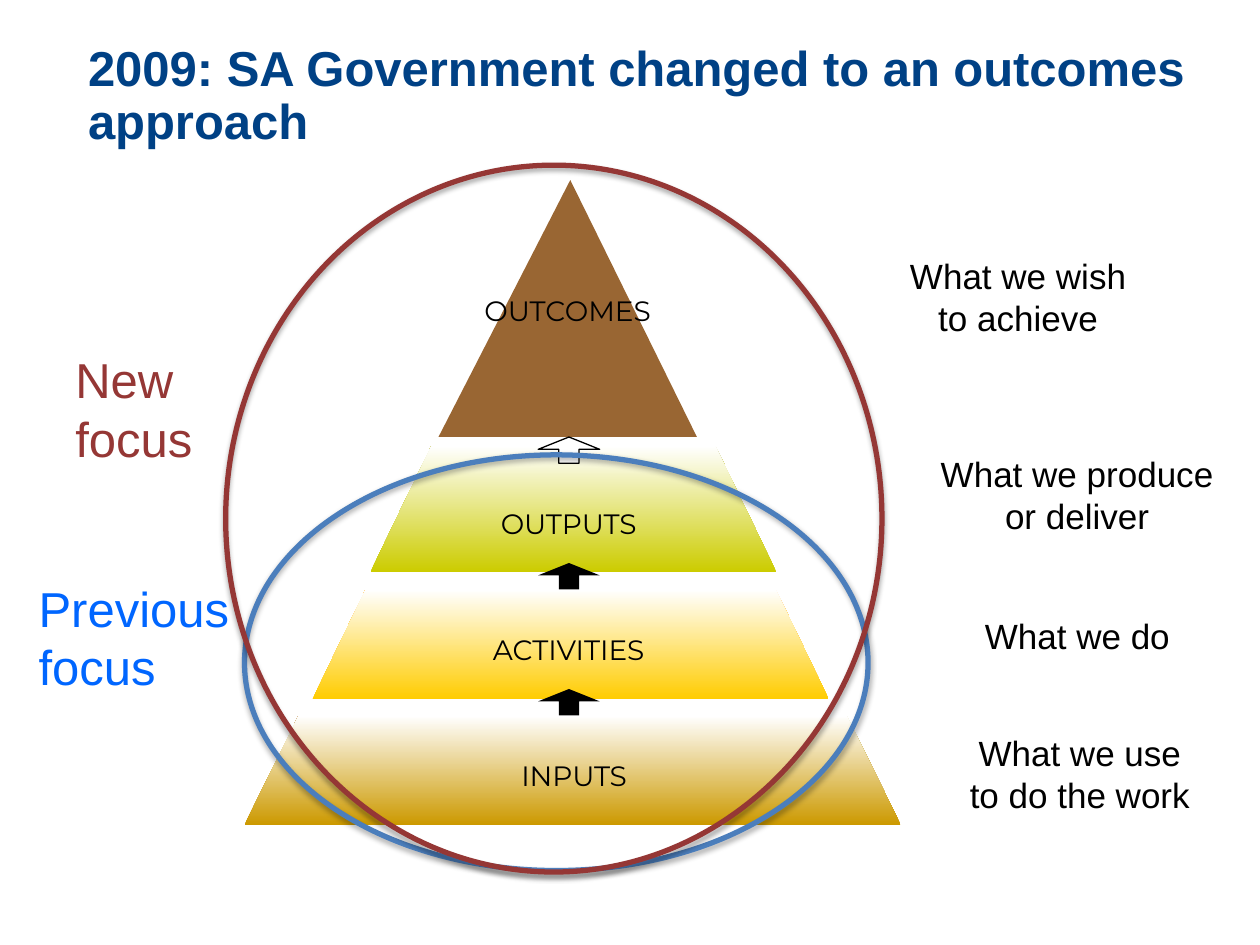
from dataclasses import dataclass

from pptx import Presentation
from pptx.dml.color import RGBColor as RGB
from pptx.enum.shapes import MSO_SHAPE as SHAPE
from pptx.enum.text import MSO_ANCHOR as ANCHOR, MSO_AUTO_SIZE as AUTO, PP_ALIGN as ALIGN
from pptx.oxml import parse_xml
from pptx.oxml.ns import nsdecls, qn
from pptx.util import Cm, Pt


@dataclass(frozen=True)
class Theme:
    title: RGB = RGB(0x00, 0x41, 0x85)
    black: RGB = RGB(0, 0, 0)
    white: RGB = RGB(255, 255, 255)
    outcomes: RGB = RGB(0x99, 0x66, 0x33)
    outputs: RGB = RGB(0xCC, 0xCC, 0x00)
    activities: RGB = RGB(0xFF, 0xCC, 0x00)
    inputs: RGB = RGB(0xCC, 0x99, 0x00)
    new_focus: RGB = RGB(0x95, 0x37, 0x35)
    previous_focus: RGB = RGB(0x00, 0x66, 0xFF)
    previous_ring: RGB = RGB(0x4B, 0x7E, 0xBC)
    heading_size: Pt = Pt(28)
    meaning_size: Pt = Pt(20)
    level_size: Pt = Pt(16)
    body_font: str = "Arial"
    level_font: str = "Montserrat"


theme = Theme()


def write(frame, text, size, color, font=theme.body_font, bold=False,
          align=ALIGN.LEFT, anchor=ANCHOR.TOP, spacing=None):
    """Fill a text frame, one paragraph for each line of text."""
    frame.word_wrap = True
    frame.auto_size = AUTO.NONE
    frame.vertical_anchor = anchor
    frame.text = text
    for paragraph in frame.paragraphs:
        paragraph.alignment = align
        paragraph.line_spacing = spacing
        for run in paragraph.runs:
            run.font.name = font
            run.font.size = size
            run.font.bold = bold
            run.font.color.rgb = color


def box(*lengths):
    """Turn left, top, width and height in centimetres into lengths."""
    return [Cm(length) for length in lengths]


deck = Presentation()
deck.slide_width, deck.slide_height = Cm(25.4), Cm(19.05)
slide = deck.slides.add_slide(deck.slide_layouts[5])

heading = slide.shapes.title
heading.left, heading.top, heading.width, heading.height = box(1.52, 0.79, 23.24, 2.34)
write(heading.text_frame, "2009: SA Government changed to an outcomes approach",
      theme.heading_size, theme.title, bold=True, anchor=ANCHOR.MIDDLE, spacing=0.9)

pyramid = slide.shapes.add_group_shape().shapes

# Lower levels: left, right, top, bottom, inset of the top edge
for left, right, top, bottom, inset, color in [
    (4.93, 18.16, 14.43, 16.63, 1.09, theme.inputs),
    (6.30, 16.71, 11.89, 14.10, 1.07, theme.activities),
    (7.47, 15.65, 8.99, 11.53, 1.23, theme.outputs),
]:
    outline = pyramid.build_freeform(Cm(left), Cm(bottom))
    outline.add_line_segments([
        (Cm(left + inset), Cm(top)),
        (Cm(right - inset), Cm(top)),
        (Cm(right), Cm(bottom)),
    ])
    level = outline.convert_to_shape()
    level.shadow.inherit = False
    level.line.fill.background()
    level.fill.gradient()
    level.fill.gradient_angle = 90
    for stop, shade in zip(level.fill.gradient_stops, (color, theme.white)):
        stop.color.rgb = shade

peak = pyramid.add_shape(SHAPE.ISOSCELES_TRIANGLE, *box(8.84, 3.63, 5.21, 5.18))
peak.adjustments[0] = 0.51
peak.shadow.inherit = False
peak.fill.solid()
peak.fill.fore_color.rgb = theme.outcomes
peak.line.fill.background()

for name, left, top, width in [
    ("OUTCOMES", 8.84, 5.79, 5.21),
    ("OUTPUTS", 7.67, 10.08, 7.59),
    ("ACTIVITIES", 7.67, 12.62, 7.59),
    ("INPUTS", 8.26, 15.16, 6.63),
]:
    label = pyramid.add_textbox(*box(left, top, width, 0.94))
    write(label.text_frame, name, theme.level_size, theme.black,
          font=theme.level_font, align=ALIGN.CENTER)

for step, color in enumerate((theme.white, theme.black, theme.black)):
    arrow = pyramid.add_shape(SHAPE.UP_ARROW, *box(10.85, 8.81 + 2.54 * step, 1.24, 0.53))
    arrow.adjustments[0], arrow.adjustments[1] = 0.33, 0.47
    arrow.shadow.inherit = False
    arrow.fill.solid()
    arrow.fill.fore_color.rgb = color
    if color == theme.white:
        arrow.line.color.rgb = theme.black
        arrow.line.width = Pt(0.75)
    else:
        arrow.line.fill.background()

for preset, place, color in [
    (SHAPE.FLOWCHART_CONNECTOR, (4.93, 9.17, 12.57, 8.38), theme.previous_ring),
    (SHAPE.OVAL, (4.55, 3.33, 13.23, 14.25), theme.new_focus),
]:
    ring = slide.shapes.add_shape(preset, *box(*place))
    ring.fill.background()
    ring.line.color.rgb = color
    ring.line.width = Pt(3)
    ring.shadow.inherit = False
    ring._element.spPr.find(qn("a:effectLst")).append(parse_xml(
        f'<a:outerShdw {nsdecls("a")} blurRad="{Pt(3.1)}" dist="{Pt(1.8)}" '
        'dir="5400000" rotWithShape="0">'
        f'<a:srgbClr val="{theme.black}"><a:alpha val="35000"/></a:srgbClr>'
        '</a:outerShdw>'))

for text, place, color in [
    ("Previous\nfocus", (0.53, 11.53, 6.68, 2.64), theme.previous_focus),
    ("New\nfocus", (1.27, 6.93, 5.18, 2.64), theme.new_focus),
]:
    focus = slide.shapes.add_textbox(*box(*place))
    write(focus.text_frame, text, theme.heading_size, color)

for text, place in [
    ("What we use to do the work", (19.23, 14.63, 5.08, 1.96)),
    ("What we do", (19.51, 12.27, 4.42, 1.12)),
    ("What we produce or deliver", (18.64, 8.99, 6.15, 1.96)),
    ("What we wish to achieve", (17.78, 5.0, 5.49, 1.96)),
]:
    meaning = slide.shapes.add_textbox(*box(*place))
    write(meaning.text_frame, text, theme.meaning_size, theme.black, align=ALIGN.CENTER)

deck.save("out.pptx")
